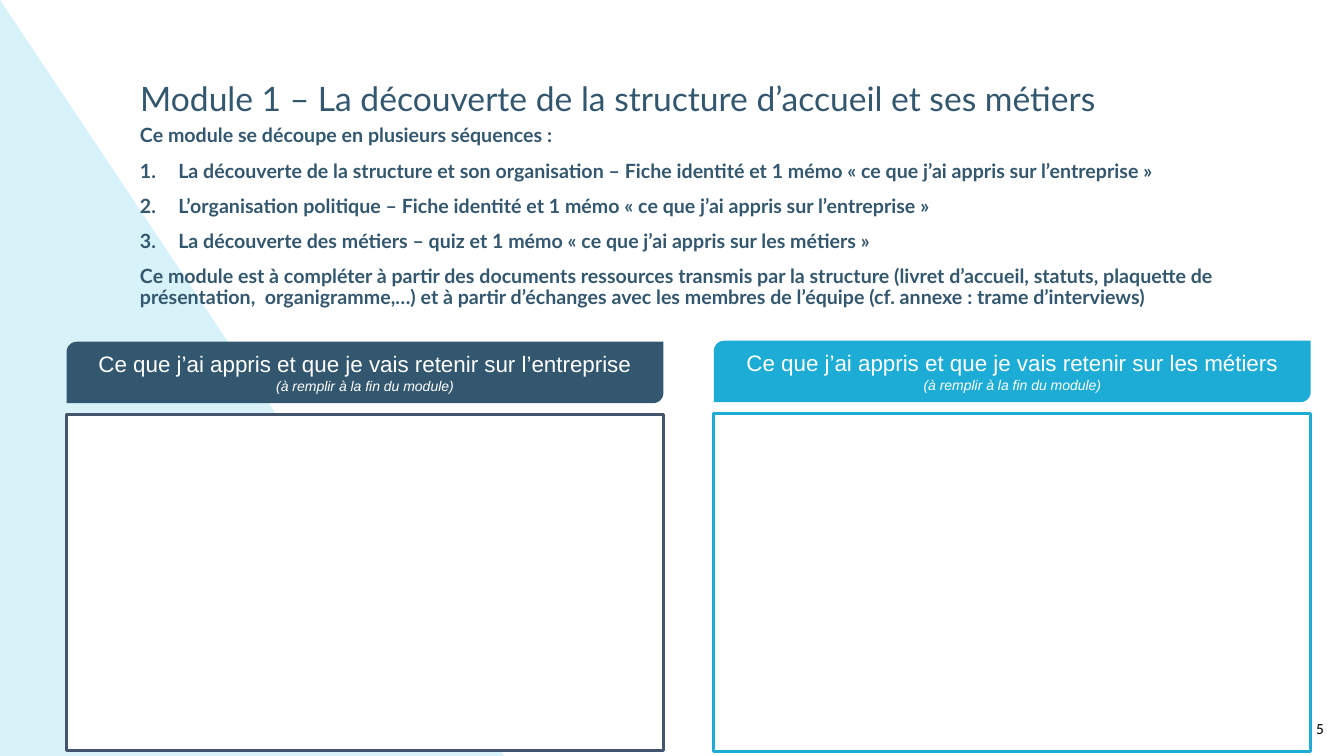
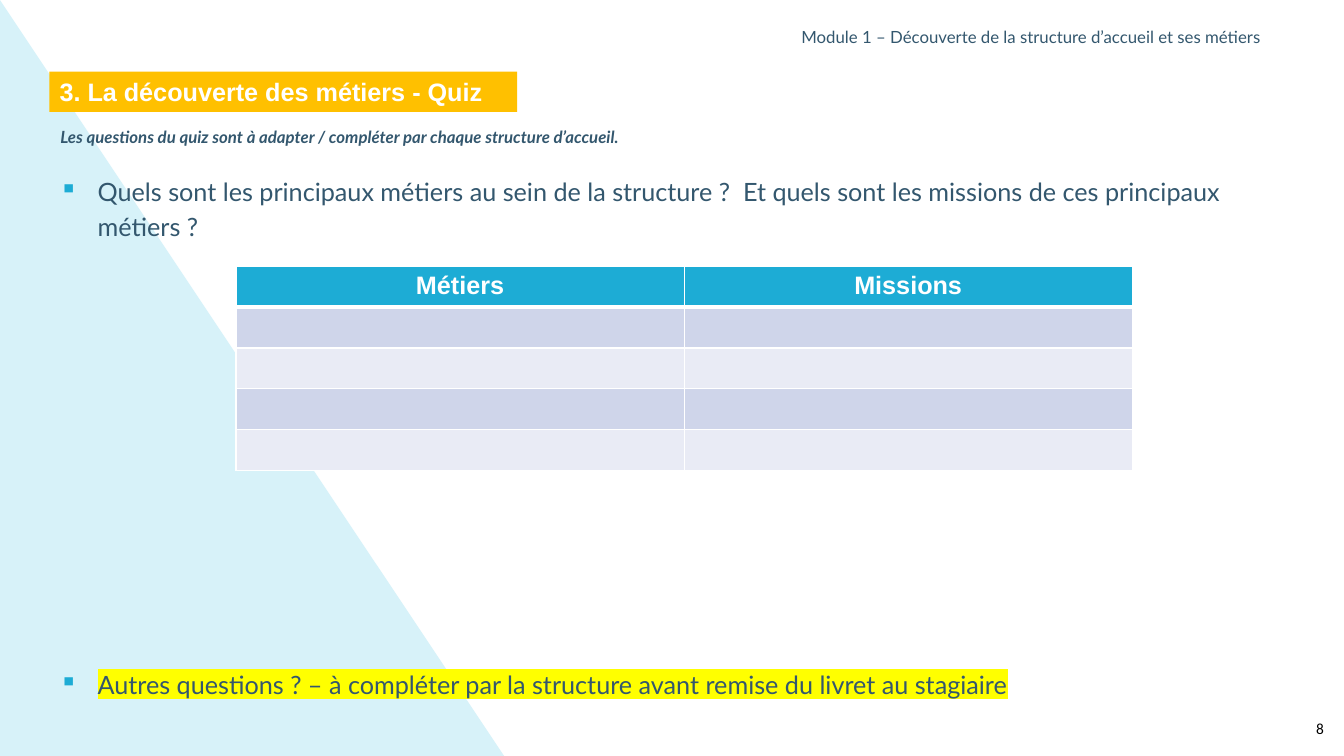
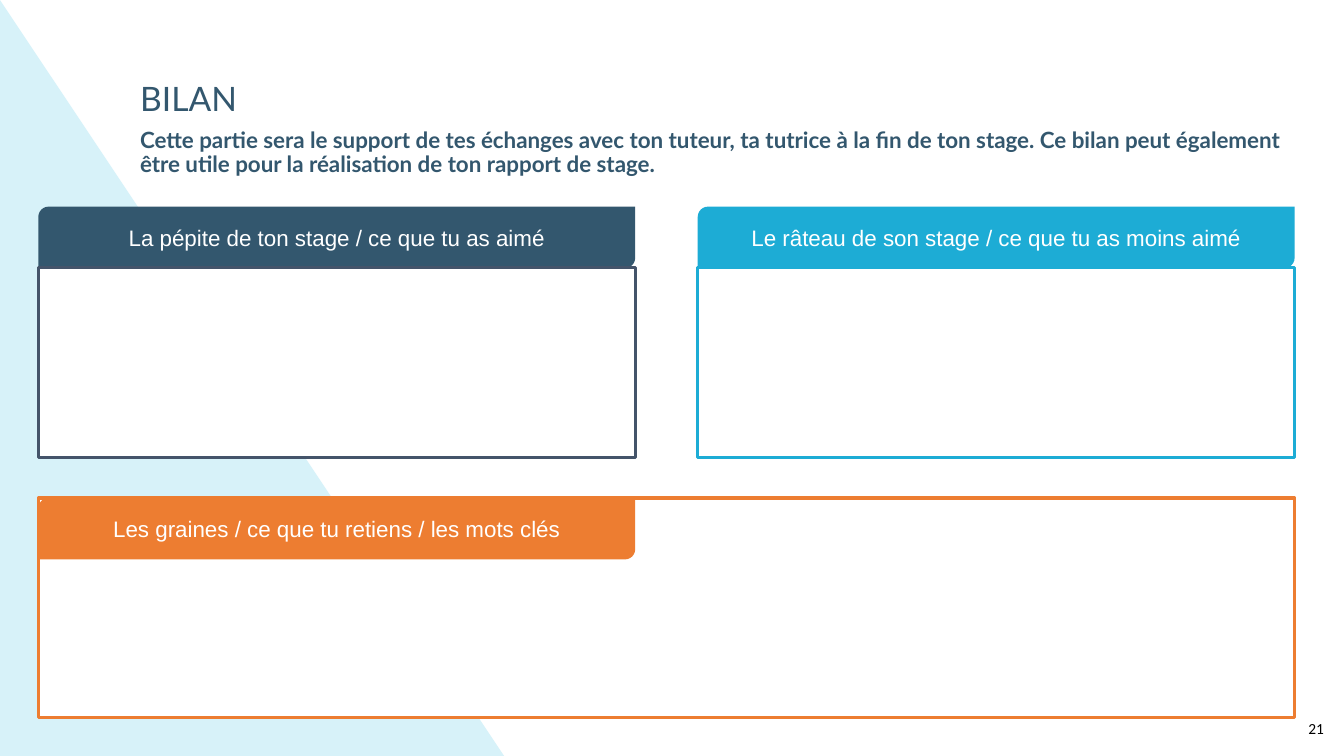
from dataclasses import dataclass, field

from lxml import etree
from pptx import Presentation
from pptx.dml.color import RGBColor
from pptx.enum.shapes import MSO_SHAPE
from pptx.enum.text import MSO_ANCHOR, MSO_AUTO_SIZE, PP_ALIGN
from pptx.oxml.ns import qn
from pptx.shapes.autoshape import Shape
from pptx.slide import Slide
from pptx.table import _Cell
from pptx.text.text import TextFrame, _Paragraph, _Run
from pptx.util import Inches, Pt

RECT, HEAD, WEDGE = (
    MSO_SHAPE.RECTANGLE,
    MSO_SHAPE.ROUND_2_DIAG_RECTANGLE,
    MSO_SHAPE.ISOSCELES_TRIANGLE,
)
TOP, MIDDLE = MSO_ANCHOR.TOP, MSO_ANCHOR.MIDDLE
LEFT, CENTER, RIGHT = PP_ALIGN.LEFT, PP_ALIGN.CENTER, PP_ALIGN.RIGHT
FIXED = MSO_AUTO_SIZE.NONE

COLORS = {
    "navy": "33576E",
    "slate": "44546A",
    "cyan": "1DACD5",
    "pale": "D7F2F9",
    "gold": "FFC000",
    "orange": "ED7D31",
    "white": "FFFFFF",
    "black": "000000",
    "yellow": "FFFF00",
    "odd": "CFD5EA",
    "even": "E9EBF5",
}

# Character formats
TITLE = {"name": "Lato", "size": Pt(24), "color": "navy"}
TEXT = {**TITLE, "size": Pt(18)}
LEAD = {**TITLE, "size": Pt(14), "bold": True}
SMALL = {**TITLE, "size": Pt(12)}
LABEL = {"name": "Arial", "size": Pt(16), "color": "white"}
BAND = {**LABEL, "size": Pt(18), "bold": True}
NOTE = {**LABEL, "size": Pt(10), "italic": True}
PAGE = {"name": "Calibri", "size": Pt(11), "color": "black"}

# Paragraph formats
TIGHT = {"alignment": LEFT, "line_spacing": 0.9}
NEXT = {**TIGHT, "space_before": Pt(10)}
LOOSE = {"alignment": LEFT, "line_spacing": 1.15}
MID = {"alignment": CENTER}

Box = tuple[float, float, float, float]


@dataclass
class Para:
    text: str
    font: dict
    form: dict = field(default_factory=lambda: TIGHT)
    mark: str = ""
    glow: str = ""


@dataclass
class Panel:
    """A colored heading with an empty frame to fill in."""
    text: str
    fill: str
    line: str
    head: Box
    frame: Box
    note: str = ""
    over: bool = False


def rgb(name: str) -> RGBColor:
    return RGBColor.from_string(COLORS[name])


def place(shape: Shape, box: Box) -> None:
    for key, value in zip(("left", "top", "width", "height"), box):
        setattr(shape, key, Inches(value))


def bullet(par: _Paragraph, mark: str) -> None:
    """Add a hanging number ("1.") or a cyan sign."""
    props = par._p.get_or_add_pPr()
    props.set("marL", str(Inches(0.38)))
    props.set("indent", str(-Inches(0.38)))
    if mark == "1.":
        etree.SubElement(props, qn("a:buAutoNum"), type="arabicPeriod")
        return
    tint = etree.SubElement(props, qn("a:buClr"))
    etree.SubElement(tint, qn("a:srgbClr"), val=COLORS["cyan"])
    etree.SubElement(props, qn("a:buChar"), char=mark)


def shine(run: _Run, name: str) -> None:
    """Highlight a run."""
    tint = etree.Element(qn("a:highlight"))
    etree.SubElement(tint, qn("a:srgbClr"), val=COLORS[name])
    run._r.rPr.find(qn("a:latin")).addprevious(tint)


def write(frame: TextFrame, paras: list[Para]) -> None:
    for num, item in enumerate(paras):
        par = frame.add_paragraph() if num else frame.paragraphs[0]
        for key, value in item.form.items():
            setattr(par, key, value)
        if item.mark:
            bullet(par, item.mark)
        run = par.add_run()
        run.text = item.text
        for key, value in item.font.items():
            if key == "color":
                run.font.color.rgb = rgb(value)
            else:
                setattr(run.font, key, value)
        if item.glow:
            shine(run, item.glow)


def setup(frame: TextFrame, anchor: MSO_ANCHOR = TOP) -> None:
    form = {"word_wrap": True, "auto_size": FIXED, "vertical_anchor": anchor}
    for key, value in form.items():
        setattr(frame, key, value)


def note(slide: Slide, box: Box, *paras: Para) -> None:
    """Add a text box."""
    shape = slide.shapes.add_textbox(*map(Inches, box))
    setup(shape.text_frame)
    write(shape.text_frame, list(paras))


def block(slide: Slide, kind: MSO_SHAPE, box: Box, fill: str,
          line: str = "") -> Shape:
    """Add a filled shape, with an outline if a line color is given."""
    shape = slide.shapes.add_shape(kind, *map(Inches, box))
    shape.shadow.inherit = False
    shape.fill.solid()
    shape.fill.fore_color.rgb = rgb(fill)
    if line:
        shape.line.color.rgb = rgb(line)
        shape.line.width = Pt(2.25)
    else:
        shape.line.fill.background()
    return shape


def panel(slide: Slide, item: Panel) -> None:
    if item.over:
        block(slide, RECT, item.frame, "white", item.line)
    head = block(slide, HEAD, item.head, item.fill)
    setup(head.text_frame, MIDDLE)
    paras = [Para(item.text, LABEL, MID)]
    if item.note:
        paras.append(Para(item.note, NOTE, MID))
    write(head.text_frame, paras)
    if not item.over:
        block(slide, RECT, item.frame, "white", item.line)


def start(deck: Presentation, title: Para, box: Box, page: int) -> Slide:
    """Add a slide with its title and page number."""
    slide = deck.slides.add_slide(deck.slide_layouts[5])
    shape = slide.shapes.title
    place(shape, box)
    setup(shape.text_frame)
    write(shape.text_frame, [title])
    note(slide, (12.8, 7.08, 0.43, 0.29),
         Para(str(page), PAGE, {"alignment": RIGHT}))
    return slide


def wedge(deck: Presentation, slide: Slide) -> None:
    """Put the pale triangle on the layout, behind all slides."""
    shape = block(slide, WEDGE, (0, 0, 5, 7.5), "pale")
    shape.adjustments[0] = 0
    deck.slide_layouts[5].shapes.element.insert(2, shape.element)


def border(cell: _Cell, base: float) -> None:
    """Draw white cell borders; base is the width of the lower one."""
    props = cell._tc.get_or_add_tcPr()
    for side, width in {"L": 1, "R": 1, "T": 1, "B": base}.items():
        line = etree.SubElement(props, qn(f"a:ln{side}"), w=str(Pt(width)))
        fill = etree.SubElement(line, qn("a:solidFill"))
        etree.SubElement(fill, qn("a:srgbClr"), val=COLORS["white"])


def grid(slide: Slide, heads: list[str], count: int, box: Box) -> None:
    """Add a table with a heading row and empty banded rows."""
    table = slide.shapes.add_table(
        count + 1, len(heads), *map(Inches, box)).table
    for row in range(count + 1):
        for col, text in enumerate(heads):
            cell = table.cell(row, col)
            border(cell, 1 if row else 3)
            cell.fill.solid()
            tint = ("odd" if row % 2 else "even") if row else "cyan"
            cell.fill.fore_color.rgb = rgb(tint)
            if not row:
                write(cell.text_frame, [Para(text, BAND, MID)])


def module(deck: Presentation) -> None:
    slide = start(
        deck,
        Para("Module 1 – La découverte de la structure d’accueil et ses métiers", TITLE),
        (1.29, 0.77, 11.44, 0.77), 5)
    wedge(deck, slide)
    steps = [
        "La découverte de la structure et son organisation – Fiche identité et 1 mémo « ce que j’ai appris sur l’entreprise »",
        "L’organisation politique – Fiche identité et 1 mémo « ce que j’ai appris sur l’entreprise »",
        "La découverte des métiers – quiz et 1 mémo « ce que j’ai appris sur les métiers »",
    ]
    note(
        slide, (1.29, 1.2, 12.04, 1.87),
        Para("Ce module se découpe en plusieurs séquences :", LEAD),
        *(Para(step, LEAD, NEXT, "1.") for step in steps),
        Para("Ce module est à compléter à partir des documents ressources transmis par la structure "
             "(livret d’accueil, statuts, plaquette de présentation,  organigramme,…) et à partir "
             "d’échanges avec les membres de l’équipe (cf. annexe : trame d’interviews)", LEAD, NEXT))
    hint = "(à remplir à la fin du module)"
    start_text = "Ce que j’ai appris et que je vais retenir sur "
    for item in (
        Panel(start_text + "l’entreprise", "navy", "slate",
              (0.66, 3.39, 5.92, 0.61), (0.66, 4.11, 5.92, 3.34), hint),
        Panel(start_text + "les métiers", "cyan", "cyan",
              (7.08, 3.38, 5.92, 0.61), (7.08, 4.1, 5.92, 3.36), hint),
    ):
        panel(slide, item)


def quiz(deck: Presentation) -> None:
    slide = start(
        deck, Para("3. La découverte des métiers - Quiz", BAND, {"alignment": LEFT}),
        (0.49, 0.71, 4.64, 0.4), 8)
    band = slide.shapes.title
    band.fill.solid()
    band.fill.fore_color.rgb = rgb("gold")
    note(slide, (0.5, 1.23, 7.44, 0.3),
         Para("Les questions du quiz sont à adapter / compléter par chaque structure d’accueil.",
              {**SMALL, "bold": True, "italic": True}))
    note(slide, (7.85, 0.24, 5.35, 0.4),
         Para("Module 1 – Découverte de la structure d’accueil et ses métiers", SMALL))
    note(slide, (0.49, 1.66, 12.58, 0.85),
         Para("Quels sont les principaux métiers au sein de la structure ?  Et quels sont "
              "les missions de ces principaux métiers ?", TEXT, LOOSE, "▪"))
    note(slide, (0.49, 6.62, 12.3, 0.4),
         Para("Autres questions ? – à compléter par la structure avant remise du livret au stagiaire",
              TEXT, TIGHT, "▪", "yellow"))
    grid(slide, ["Métiers", "Missions"], 4, (2.34, 2.64, 8.89, 2.03))


def review(deck: Presentation) -> None:
    slide = start(deck, Para("BILAN", TITLE), (1.29, 0.77, 10.89, 0.61), 21)
    note(slide, (1.29, 1.23, 11.68, 0.61),
         Para("Cette partie sera le support de tes échanges avec ton tuteur, ta tutrice à la fin de "
              "ton stage. Ce bilan peut également être utile pour la réalisation de ton rapport "
              "de stage.", {**LEAD, "size": Pt(16)}))
    for item in (
        Panel("La pépite de ton stage / ce que tu as aimé", "navy", "slate",
              (0.38, 2.05, 5.92, 0.61), (0.38, 2.65, 5.92, 1.89)),
        Panel("Le râteau de son stage / ce que tu as moins aimé", "cyan", "cyan",
              (6.92, 2.05, 5.92, 0.61), (6.92, 2.65, 5.92, 1.89)),
        Panel("Les graines / ce que tu retiens / les mots clés", "orange", "orange",
              (0.38, 4.94, 5.92, 0.61), (0.38, 4.94, 12.46, 2.18), over=True),
    ):
        panel(slide, item)


def main() -> None:
    deck = Presentation()
    deck.slide_width, deck.slide_height = Inches(13.33), Inches(7.5)
    for build in (module, quiz, review):
        build(deck)
    deck.save("out.pptx")


if __name__ == "__main__":
    main()
